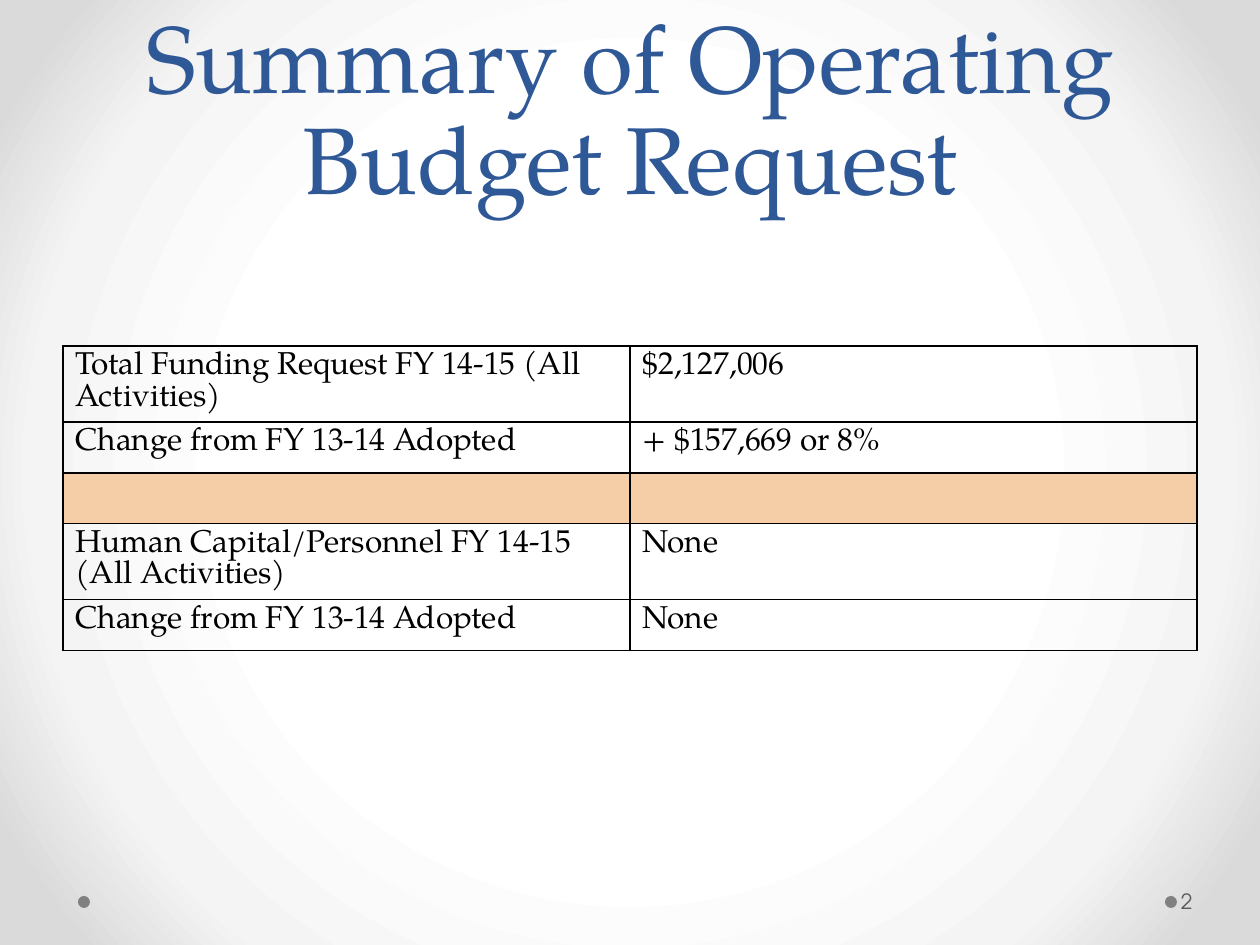
from lxml.etree import SubElement
from pptx import Presentation
from pptx.dml.color import RGBColor
from pptx.enum.shapes import MSO_SHAPE
from pptx.enum.text import MSO_ANCHOR, PP_ALIGN
from pptx.oxml import parse_xml
from pptx.oxml.ns import nsdecls, qn
from pptx.util import Pt

EMU_PER_PX = 914400 / 126
SERIF = "TeX Gyre Pagella"
SANS = "TeX Gyre Adventor"
COLORS = {
    "title": "2F5897",
    "text": "000000",
    "border": "000000",
    "divider": "F5CEA7",
    "dot": "808080",
    "number": "595959",
}
BACKGROUND_STOPS = [(50, "FFFFFF"), (76, "F4F4F4"), (92, "DADADA")]
BUDGET_ROWS = [
    ("Total Funding Request FY 14-15 (All Activities)", "$2,127,006"),
    ("Change from FY 13-14 Adopted", "+ $157,669 or 8%"),
    ("", ""),
    ("Human Capital/Personnel FY 14-15 (All Activities)", "None"),
    ("Change from FY 13-14 Adopted", "None"),
]
ROW_HEIGHTS = [76, 51, 44, 76, 51]


def px(length):
    return round(length * EMU_PER_PX)


class SlideBuilder:
    """Holds the current slide and the style shared by its elements."""

    def __init__(self, slide):
        self.slide = slide

    def background(self, stops):
        """Fill the slide with a gradient that spreads in circles from its centre."""
        stop_xml = "".join(
            f'<a:gs pos="{position * 1000}"><a:srgbClr val="{color}"/></a:gs>'
            for position, color in stops
        )
        background = parse_xml(
            f'<p:bg {nsdecls("p", "a")}><p:bgPr><a:gradFill rotWithShape="1">'
            f'<a:gsLst>{stop_xml}</a:gsLst><a:path path="circle">'
            '<a:fillToRect l="50000" t="50000" r="50000" b="50000"/></a:path>'
            "</a:gradFill><a:effectLst/></p:bgPr></p:bg>"
        )
        self.slide.element.find(qn("p:cSld")).insert(0, background)

    def dot(self, left, top, size):
        shape = self.slide.shapes.add_shape(
            MSO_SHAPE.OVAL, px(left), px(top), px(size), px(size)
        )
        shape.shadow.inherit = False
        shape.fill.solid()
        shape.fill.fore_color.rgb = RGBColor.from_string(COLORS["dot"])
        shape.line.fill.background()

    def format_text(self, text_frame, font, size, color, line_spacing=None):
        for paragraph in text_frame.paragraphs:
            if line_spacing:
                paragraph.line_spacing = Pt(line_spacing)
            for run in paragraph.runs:
                run.font.name = font
                run.font.size = Pt(size)
                run.font.color.rgb = RGBColor.from_string(COLORS[color])

    def text(self, text, left, top, width, height, anchor, font, size, color,
             line_spacing=None, align=PP_ALIGN.LEFT):
        shape = self.slide.shapes.add_textbox(
            px(left), px(top), px(width), px(height)
        )
        text_frame = shape.text_frame
        text_frame.word_wrap = True
        text_frame.vertical_anchor = anchor
        text_frame.text = text
        text_frame.paragraphs[0].alignment = align
        self.format_text(text_frame, font, size, color, line_spacing)
        return text_frame

    def cell_borders(self, cell):
        properties = cell._tc.get_or_add_tcPr()
        for index, side in enumerate(("lnL", "lnR", "lnT", "lnB")):
            line = SubElement(properties, qn(f"a:{side}"), w=str(Pt(1)))
            fill = SubElement(line, qn("a:solidFill"))
            SubElement(fill, qn("a:srgbClr"), val=COLORS["border"])
            properties.insert(index, line)

    def table(self, rows, left, top, width, row_heights):
        frame = self.slide.shapes.add_table(
            len(rows), len(rows[0]), px(left), px(top), px(width), px(sum(row_heights))
        )
        table = frame.table
        table.first_row = False
        table.horz_banding = False
        for row, height, texts in zip(table.rows, row_heights, rows):
            row.height = px(height)
            for cell, text in zip(row.cells, texts):
                cell.text_frame.text = text
                self.format_text(cell.text_frame, SERIF, 18, "text", 18)
                if text:
                    cell.fill.background()
                else:
                    cell.fill.solid()
                    cell.fill.fore_color.rgb = RGBColor.from_string(COLORS["divider"])
                self.cell_borders(cell)


def main():
    presentation = Presentation()
    presentation.slide_width = px(1260)
    presentation.slide_height = px(945)
    builder = SlideBuilder(presentation.slides.add_slide(presentation.slide_layouts[6]))

    builder.background(BACKGROUND_STOPS)
    for left in (1165, 78):
        builder.dot(left, 896, 12)
    builder.text("Summary of Operating Budget Request", 63, 0, 1134, 220,
                 MSO_ANCHOR.BOTTOM, SERIF, 54, "title", 58, PP_ALIGN.CENTER)
    builder.table(BUDGET_ROWS, 63, 346, 1134, ROW_HEIGHTS)
    number = builder.text("2", 1177, 876, 77, 50, MSO_ANCHOR.MIDDLE, SANS, 12, "number")
    number.margin_left = px(4)
    number.margin_right = px(6)

    presentation.save("out.pptx")


if __name__ == "__main__":
    main()
